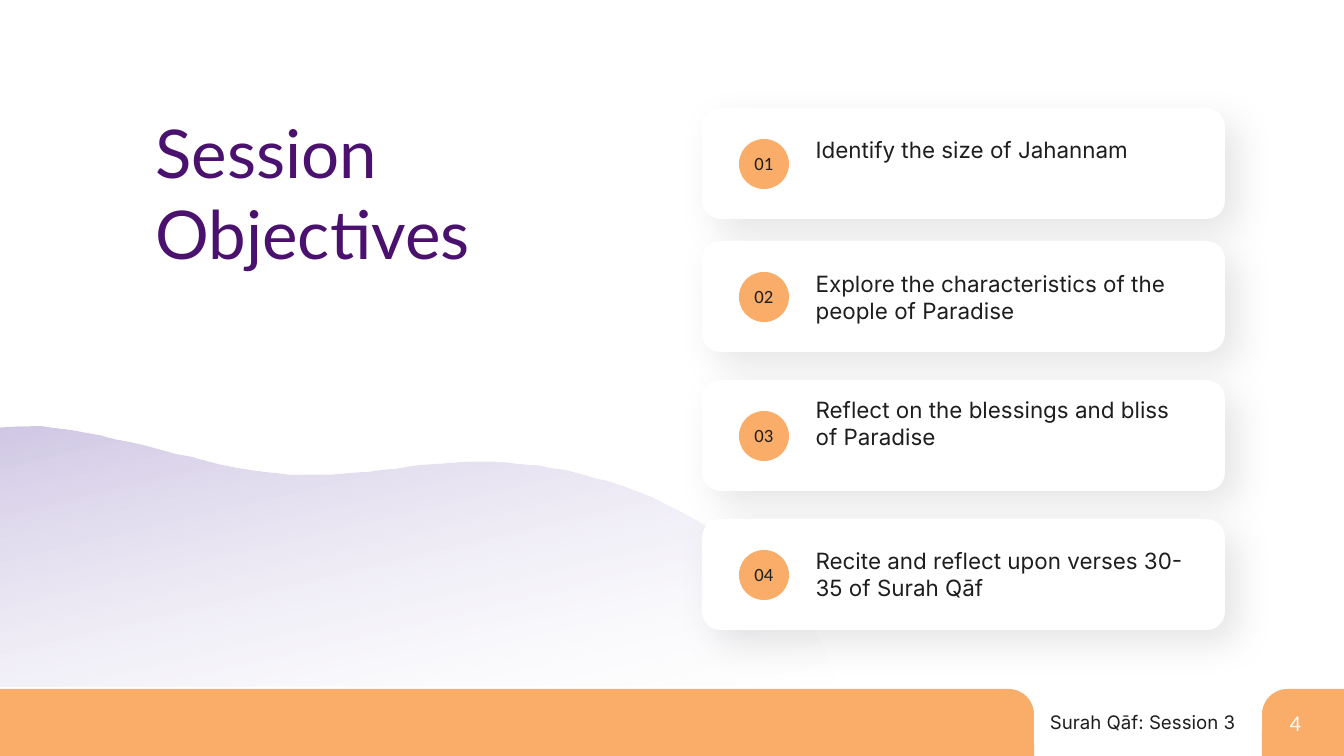
import math
import pptx
import pptx.dml.color
import pptx.enum.shapes
import pptx.enum.text
import pptx.oxml
import pptx.oxml.ns
import pptx.util

SCALE = 914400 / 67.2
SHAPES = pptx.enum.shapes.MSO_SHAPE
ALIGN = pptx.enum.text.PP_ALIGN
ORANGE, INK, WHITE, PURPLE = "FAAC69", "1E1E1E", "FFFFFF", "4B116F"
NAMESPACE = pptx.oxml.ns.nsdecls("a")


def color(value):
    return pptx.dml.color.RGBColor.from_string(value)


def add_item(shapes, box, fill=None, kind=None, lines=(), align=ALIGN.LEFT, **font_values):
    left, top, width, height = [round(value * SCALE) for value in box]
    if kind is not None:
        shape = shapes.add_shape(kind, left, top, width, height)
        shape.shadow.inherit = False
        shape.fill.solid()
        shape.fill.fore_color.rgb = color(fill)
        shape.line.fill.background()
        return shape
    shape = shapes.add_textbox(left, top, width, height)
    frame = shape.text_frame
    frame.word_wrap = True
    frame.auto_size = pptx.enum.text.MSO_AUTO_SIZE.SHAPE_TO_FIT_TEXT
    frame.text = "\n".join(lines)
    for paragraph in frame.paragraphs:
        paragraph.alignment = align
        paragraph.font.color.rgb = color(fill)
        for name, value in font_values.items():
            setattr(paragraph.font, name, value)
    return shape


presentation = pptx.Presentation()
presentation.slide_width = round(1344 * SCALE)
presentation.slide_height = round(756 * SCALE)
slide = presentation.slides.add_slide(presentation.slide_layouts[6])
slide.background.fill.solid()
slide.background.fill.fore_color.rgb = color(WHITE)

page_format = {"name": "Calibri", "size": pptx.util.Pt(24)}
footer_format = {"name": "Inter", "size": pptx.util.Pt(20)}
title_format = {"name": "Lato", "size": pptx.util.Pt(72)}
number_format = {"name": "Calibri", "size": pptx.util.Pt(20)}
objective_format = {"name": "Inter", "size": pptx.util.Pt(24)}

page_tab = add_item(slide.shapes, (1262, 689, 82, 67), ORANGE, SHAPES.ROUND_1_RECTANGLE)
page_tab.adjustments[0] = 0.38
page_tab._element.spPr.xfrm.set("flipH", "1")
add_item(slide.shapes, (999, 708, 243, 30), INK, lines=["Surah Qāf: Session 3"],
         align=ALIGN.RIGHT, **footer_format)
add_item(slide.shapes, (1283, 706, 41, 34), WHITE, lines=["4"], **page_format)
footer_bar = add_item(slide.shapes, (0, 689, 1034, 67), ORANGE, SHAPES.ROUND_1_RECTANGLE)
footer_bar.adjustments[0] = 0.38

wave_points = [(17, 426)]
wave_curves = [
    ((85, 424), (175, 457), (246, 469)),
    ((331, 484), (387, 466), (456, 462)),
    ((523, 459), (603, 470), (681, 512)),
    ((749, 548), (815, 607), (832, 673)),
]
for first, second, end in wave_curves:
    start = wave_points[-1]
    for step in range(1, 17):
        t = step / 16
        weights = ((1 - t) ** 3, 3 * t * (1 - t) ** 2, 3 * t ** 2 * (1 - t), t ** 3)
        wave_points.append(tuple(
            sum(weight * point[axis] for weight, point in zip(weights, (start, first, second, end)))
            for axis in (0, 1)))
wave_points += [(834, 685), (-1, 687), (-1, 428)]

tilt = math.radians(13.3)
center_x, center_y = 387, 563
level_points = [
    (center_x + (x - center_x) * math.cos(tilt) - (y - center_y) * math.sin(tilt),
     center_y + (x - center_x) * math.sin(tilt) + (y - center_y) * math.cos(tilt))
    for x, y in wave_points]
builder = slide.shapes.build_freeform(*level_points[0], scale=SCALE)
builder.add_line_segments(level_points[1:], close=True)
wave = builder.convert_to_shape()
wave.rotation = 346.7
wave.shadow.inherit = False
wave.line.fill.background()
wave.fill.gradient()
wave.fill.gradient_angle = 270
for stop, position, value in zip(wave.fill.gradient_stops, (0, 1), ("C3B8DE", WHITE)):
    stop.position = position
    stop.color.rgb = color(value)
last_color = wave._element.spPr.findall(".//" + pptx.oxml.ns.qn("a:srgbClr"))[-1]
last_color.append(pptx.oxml.parse_xml(f'<a:alpha {NAMESPACE} val="0"/>'))

add_item(slide.shapes, (149, 108, 552, 169), PURPLE, lines=["Session", "Objectives"], **title_format)

objectives = [
    (108, 25, 384, 34, "Identify the size of Jahannam"),
    (241, 26, 384, 61, "Explore the characteristics of the people of Paradise"),
    (380, 13, 376, 61, "Reflect on the blessings and bliss of Paradise"),
    (519, 25, 384, 61, "Recite and reflect upon verses 30-35 of Surah Qāf"),
]
for number, (top, text_offset, text_width, text_height, objective) in enumerate(objectives, 1):
    group = slide.shapes.add_group_shape()
    card = add_item(group.shapes, (702, top, 523, 111), WHITE, SHAPES.ROUNDED_RECTANGLE)
    effects = card._element.spPr.find(pptx.oxml.ns.qn("a:effectLst"))
    effects.append(pptx.oxml.parse_xml(
        f'<a:outerShdw {NAMESPACE} blurRad="508000" dist="254000" dir="2700000" algn="tl" '
        'rotWithShape="0"><a:srgbClr val="000000"><a:alpha val="10000"/></a:srgbClr></a:outerShdw>'))
    add_item(group.shapes, (739, top + 31, 50, 50), ORANGE, SHAPES.OVAL)
    add_item(group.shapes, (739, top + 41, 50, 30), INK, lines=[f"{number:02d}"],
             align=ALIGN.CENTER, **number_format)
    add_item(group.shapes, (809, top + text_offset, text_width, text_height), INK,
             lines=[objective], **objective_format)

presentation.save("out.pptx")
